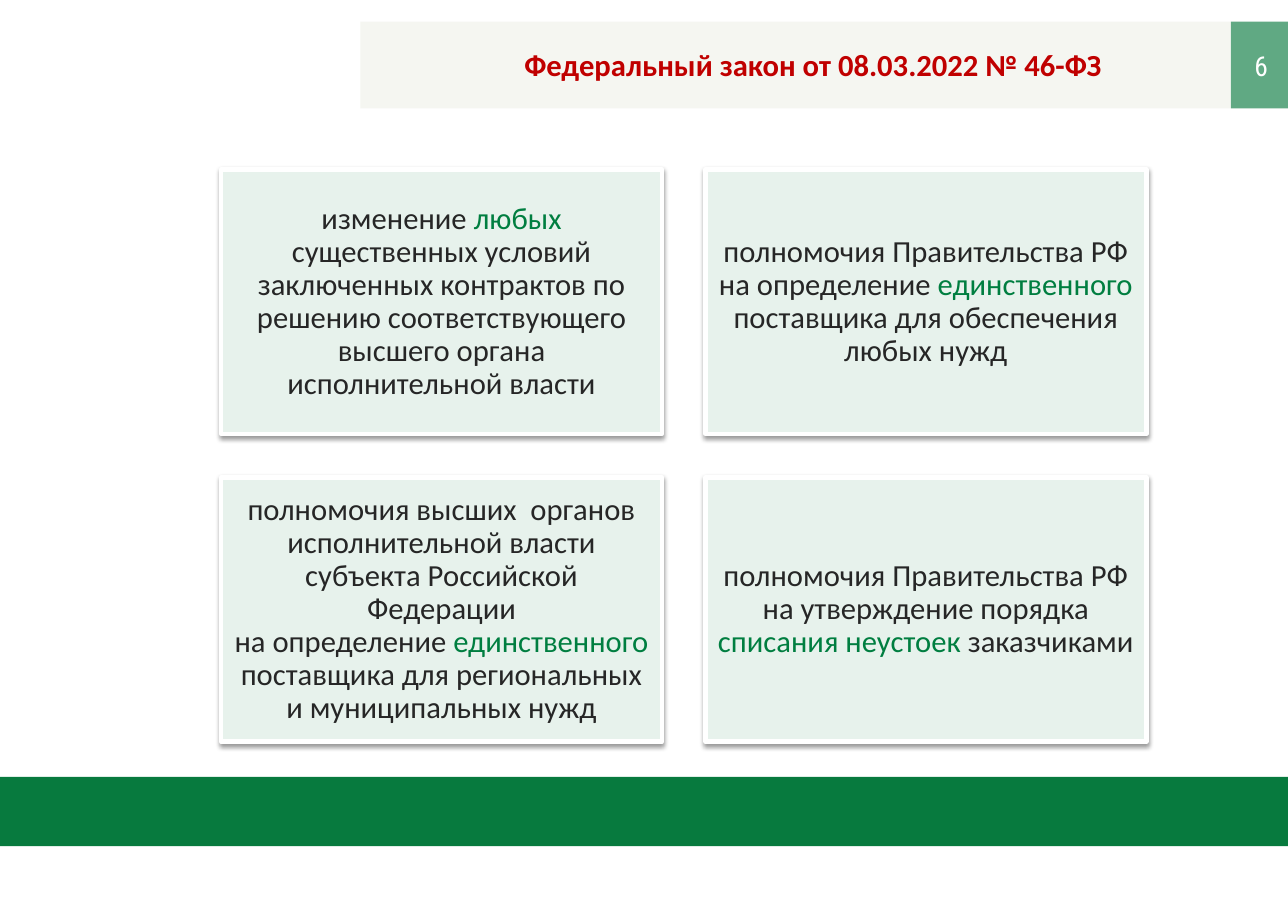
from lxml.etree import SubElement
from pptx import Presentation
from pptx.dml.color import RGBColor
from pptx.enum.shapes import MSO_SHAPE
from pptx.enum.text import MSO_ANCHOR, PP_ALIGN
from pptx.oxml.ns import qn
from pptx.util import Pt

GREEN = RGBColor(0x07, 0x7A, 0x3E)
ACCENT = RGBColor(0x00, 0x7E, 0x40)
CREAM = RGBColor(0xF5, 0xF6, 0xF1)
MINT = RGBColor(0xE7, 0xF2, 0xEC)
RED = RGBColor(0xC0, 0x00, 0x00)
DARK = RGBColor(0x26, 0x26, 0x26)
WHITE = RGBColor(0xFF, 0xFF, 0xFF)

SLIDE_WIDTH, SLIDE_HEIGHT = 841.7, 595.4

# Text between asterisks is shown in the accent colour
CARDS = [
    "изменение *любых* существенных условий заключенных контрактов по решению "
    "соответствующего высшего органа исполнительной власти",
    "полномочия Правительства РФ на определение *единственного* поставщика "
    "для обеспечения любых нужд",
    "полномочия высших  органов исполнительной власти субъекта Российской Федерации\n"
    "на определение *единственного* поставщика для региональных\n"
    "и муниципальных нужд",
    "полномочия Правительства РФ на утверждение порядка *списания неустоек* заказчиками",
]


def add_box(page, left, top, width, height, fill):
    box = page.shapes.add_shape(MSO_SHAPE.RECTANGLE, Pt(left), Pt(top), Pt(width), Pt(height))
    box.shadow.inherit = False
    box.fill.solid()
    box.fill.fore_color.rgb = fill
    box.line.fill.background()
    box.text_frame.word_wrap = True
    box.text_frame.vertical_anchor = MSO_ANCHOR.MIDDLE
    return box


def style_span(span, size, color, name="Calibri", bold=False):
    span.font.size = Pt(size)
    span.font.name = name
    span.font.bold = bold
    span.font.color.rgb = color


def set_line(box, text, size, color, **style):
    para = box.text_frame.paragraphs[0]
    para.text = text
    para.alignment = PP_ALIGN.CENTER
    style_span(para.runs[0], size, color, **style)


def add_alpha(color, percent):
    SubElement(color, qn("a:alpha"), val=str(percent * 1000))


def add_shadow(box):
    effects = box._element.spPr.find(qn("a:effectLst"))
    shadow = SubElement(effects, qn("a:outerShdw"), blurRad=str(Pt(3.1)), dist=str(Pt(1.6)),
                        dir="5400000", algn="ctr", rotWithShape="0")
    add_alpha(SubElement(shadow, qn("a:srgbClr"), val="000000"), 38)


def add_header(page, left, top, width, height):
    number_width = 39.6
    bar_width = width - number_width
    add_box(page, left, top, bar_width, height, CREAM)

    # Title
    indent, title_height = 23, 31.7
    title = page.shapes.add_textbox(Pt(left + indent), Pt(top + (height - title_height) / 2),
                                    Pt(bar_width - indent), Pt(title_height))
    title.text_frame.word_wrap = True
    set_line(title, "Федеральный закон от 08.03.2022 № 46-ФЗ", 20, RED, bold=True)

    # Page number
    number = add_box(page, left + bar_width, top, number_width, height, GREEN)
    add_alpha(number._element.spPr.find(qn("a:solidFill"))[0], 64)
    set_line(number, "6", 18, WHITE, name="Roboto Condensed")


def add_card(page, left, top, width, height, text):
    card = add_box(page, left, top, width, height, MINT)
    card.line.color.rgb = WHITE
    card.line.width = Pt(3)
    add_shadow(card)

    frame = card.text_frame
    frame.margin_left = frame.margin_right = Pt(6)
    frame.margin_top = frame.margin_bottom = Pt(6)
    para = frame.paragraphs[0]
    para.alignment = PP_ALIGN.CENTER
    para.line_spacing = 0.9
    for row, line in enumerate(text.split("\n")):
        if row:
            para.add_line_break()
        for position, part in enumerate(line.split("*")):
            span = para.add_run()
            span.text = part
            style_span(span, 20, ACCENT if position % 2 else DARK)


def add_cards(page, left, top, width, height):
    gap = 28.4
    card_width, card_height = (width - gap) / 2, (height - gap) / 2
    for index, text in enumerate(CARDS):
        row, column = divmod(index, 2)
        add_card(page, left + column * (card_width + gap), top + row * (card_height + gap),
                 card_width, card_height, text)


def main():
    deck = Presentation()
    deck.slide_width, deck.slide_height = Pt(SLIDE_WIDTH), Pt(SLIDE_HEIGHT)
    page = deck.slides.add_slide(deck.slide_layouts[6])
    add_header(page, 235.5, 14.2, 608.4, 56.7)
    add_box(page, 0, 507.8, SLIDE_WIDTH, 45.2, GREEN)  # footer band
    add_cards(page, 144.5, 110.8, 604.6, 374)
    deck.save("out.pptx")


if __name__ == "__main__":
    main()
